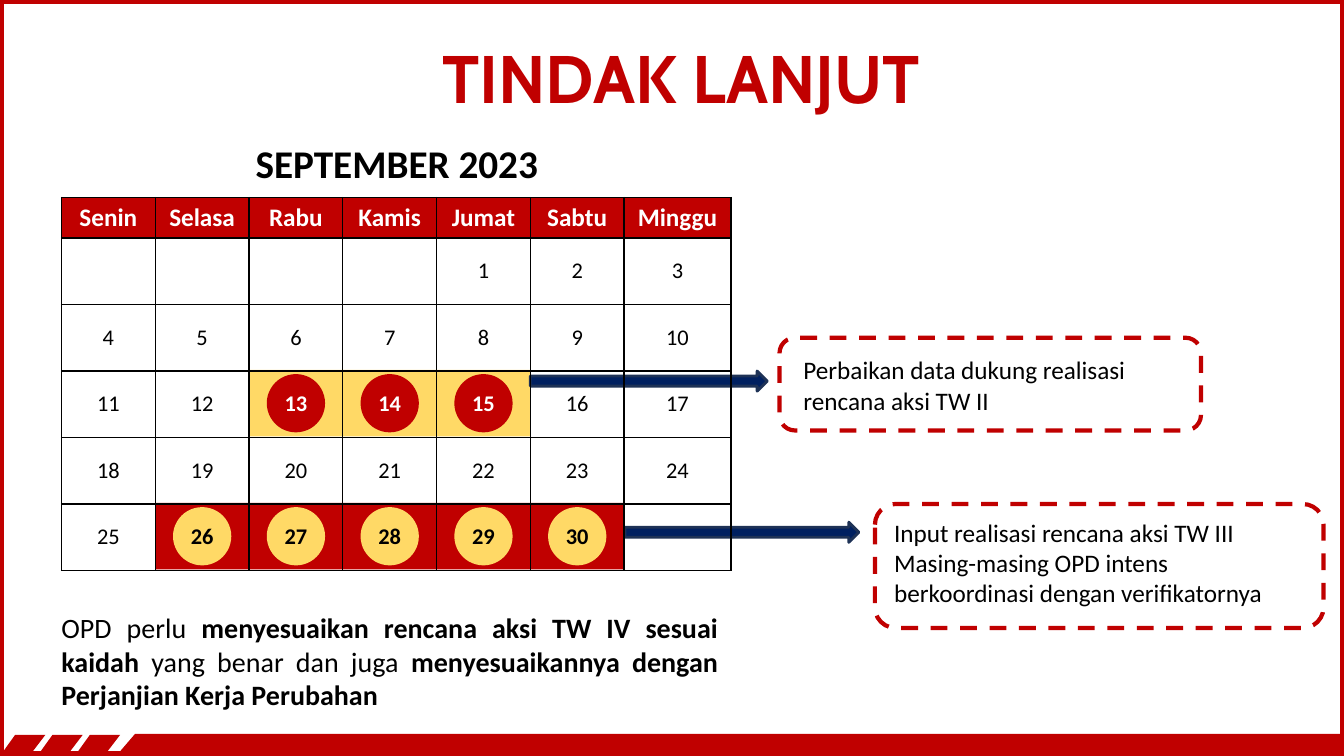
from dataclasses import dataclass

from lxml import etree
from pptx import Presentation
from pptx import util as u
from pptx.dml.color import RGBColor
from pptx.enum import dml, shapes, text
from pptx.oxml.ns import qn


@dataclass(frozen=True)
class Theme:
    red: str = "C00000"
    gold: str = "FFD966"
    navy: str = "002060"
    navy_edge: str = "1E3256"
    black: str = "000000"
    white: str = "FFFFFF"
    display: str = "Cabin"
    body: str = "Calibri"
    title: int = 48
    month: int = 28
    note: int = 20
    label: int = 18
    day: int = 16


@dataclass(frozen=True)
class Box:
    """A rectangle in percent of the slide's width and height."""
    x: float
    y: float
    w: float
    h: float


@dataclass(frozen=True)
class Label:
    box: Box
    paragraphs: list[list[tuple[str, bool]]]  # runs as (words, bold)
    size: int
    align: text.PP_ALIGN = text.PP_ALIGN.LEFT


@dataclass(frozen=True)
class Period:
    """Marked days: a stretch of one week of the calendar."""
    week: int
    first: int
    days: int
    cell: str
    dot: str
    ink: str

    def has(self, week: int, col: int) -> bool:
        return week == self.week and self.first <= col < self.first + self.days


T = Theme()
W, H = 13.33, 7.5
X0, Y0, COL, LAST_COL, HEAD, ROW = 0.61, 1.96, 0.93, 1.06, 0.39, 0.66
WEEKS, OFFSET, MONTH_DAYS, DOT = 5, 3, 30, 0.55
WEEKDAYS = ["Senin", "Selasa", "Rabu", "Kamis", "Jumat", "Sabtu", "Minggu"]
PERIODS = [
    Period(2, 2, 3, T.gold, T.red, T.white),
    Period(4, 1, 5, T.red, T.gold, T.black),
]
CALLOUTS = [Box(58, 44.67, 31.36, 12.27), Box(65.1, 66.67, 33.38, 16.4)]
ARROWS = [Box(39.46, 49.07, 17.63, 2.67), Box(46.51, 69.07, 17.4, 2.67)]
TITLE = Label(Box(5.33, 2.8, 90.7, 14.8), [[("TINDAK LANJUT", True)]],
              T.title, text.PP_ALIGN.CENTER)
LABELS = [
    Label(Box(4.35, 17.73, 50.34, 7.6), [[("SEPTEMBER 2023", True)]],
          T.month, text.PP_ALIGN.CENTER),
    Label(Box(3.83, 80.13, 50.34, 14.8), [[
        ("OPD perlu ", False),
        ("menyesuaikan rencana aksi TW IV sesuai kaidah", True),
        (" yang benar dan juga ", False),
        ("menyesuaikannya dengan Perjanjian Kerja Perubahan", True),
    ]], T.note, text.PP_ALIGN.JUSTIFY),
    Label(Box(59.04, 46.27, 28.96, 9.47),
          [[("Perbaikan data dukung realisasi rencana aksi TW II", False)]], T.label),
    Label(Box(65.79, 67.73, 31.96, 13.47), [
        [("Input realisasi rencana aksi TW III", False)],
        [("Masing-masing OPD intens berkoordinasi dengan verifikatornya", False)],
    ], T.label),
]
STRIPE = [(3.38, 97.2), (1.13, 97.2), (0, 100), (2.18, 100)]
STRIPE_STEP = 2.78
BAND = [(100, 97.07), (10.05, 97.07), (8.7, 99.87), (100, 99.87)]


def rgb(color: str) -> RGBColor:
    return RGBColor.from_string(color)


def px(share: float) -> int:
    return u.Inches(W * share / 100)


def py(share: float) -> int:
    return u.Inches(H * share / 100)


def place(box: Box) -> tuple[int, int, int, int]:
    return px(box.x), py(box.y), px(box.w), py(box.h)


def cell_place(week: int, col: int, days: int) -> tuple[int, int, int, int]:
    """Area of a stretch of calendar days."""
    return (u.Inches(X0 + col * COL), u.Inches(Y0 + HEAD + week * ROW),
            u.Inches(days * COL), u.Inches(ROW))


def paint(sp, fill: str | None, line: str | None = None, width: float = 2) -> None:
    sp.shadow.inherit = False
    if fill:
        sp.fill.solid()
        sp.fill.fore_color.rgb = rgb(fill)
    else:
        sp.fill.background()
    if line:
        sp.line.color.rgb = rgb(line)
        sp.line.width = u.Pt(width)
    else:
        sp.line.fill.background()


def style(font, name: str, size: int, color: str) -> None:
    font.name, font.size = name, u.Pt(size)
    font.color.rgb = rgb(color)


def add_polygon(s, points: list[tuple[float, float]], shift: float = 0) -> None:
    start, *rest = [(px(x + shift), py(y)) for x, y in points]
    builder = s.shapes.build_freeform(*start, scale=1.0)
    builder.add_line_segments(rest, close=True)
    paint(builder.convert_to_shape(), T.red)


def add_label(s, label: Label, name: str, color: str):
    tf = s.shapes.add_textbox(*place(label.box)).text_frame
    tf.word_wrap = True
    for i, runs in enumerate(label.paragraphs):
        p = tf.add_paragraph() if i else tf.paragraphs[0]
        p.alignment = label.align
        style(p.font, name, label.size, color)
        for words, bold in runs:
            r = p.add_run()
            r.text, r.font.bold = words, bold
    return tf


def add_period(s, period: Period) -> None:
    area = cell_place(period.week, period.first, period.days)
    paint(s.shapes.add_shape(shapes.MSO_SHAPE.RECTANGLE, *area), period.cell)
    d = u.Inches(DOT)
    for col in range(period.first, period.first + period.days):
        x, y, w, h = cell_place(period.week, col, 1)
        dot = s.shapes.add_shape(shapes.MSO_SHAPE.OVAL, x + (w - d) // 2,
                                 y + (h - d) // 2, d, d)
        paint(dot, period.dot, period.dot)


def add_borders(cell) -> None:
    tc_pr = cell._tc.get_or_add_tcPr()
    for i, side in enumerate(("lnL", "lnR", "lnT", "lnB")):
        ln = etree.Element(qn(f"a:{side}"), w=str(u.Pt(1)))
        fill = etree.SubElement(ln, qn("a:solidFill"))
        etree.SubElement(fill, qn("a:srgbClr"), val=T.black)
        tc_pr.insert(i, ln)


def fill_cell(cell, words: str, size: int, color: str, bold: bool) -> None:
    p = cell.text_frame.paragraphs[0]
    p.text, p.alignment = words, text.PP_ALIGN.CENTER
    style(p.font, T.body, size, color)
    p.font.bold = bold


def add_calendar(s) -> None:
    cols = len(WEEKDAYS)
    table = s.shapes.add_table(
        WEEKS + 1, cols, u.Inches(X0), u.Inches(Y0),
        u.Inches(COL * (cols - 1) + LAST_COL), u.Inches(HEAD + WEEKS * ROW)).table
    table.first_row = table.horz_banding = False
    for c, weekday in enumerate(WEEKDAYS):
        table.columns[c].width = u.Inches(LAST_COL if c == cols - 1 else COL)
        head = table.cell(0, c)
        fill_cell(head, weekday, T.label, T.white, True)
        head.fill.solid()
        head.fill.fore_color.rgb = rgb(T.red)
        add_borders(head)
        for week in range(WEEKS):
            day = week * cols + c - OFFSET
            period = next((m for m in PERIODS if m.has(week, c)), None)
            cell = table.cell(week + 1, c)
            fill_cell(cell, str(day) if 1 <= day <= MONTH_DAYS else "", T.day,
                      period.ink if period else T.black, period is not None)
            cell.vertical_anchor = text.MSO_ANCHOR.MIDDLE
            cell.fill.background()
            add_borders(cell)
    for i, row in enumerate(table.rows):
        row.height = u.Inches(ROW if i else HEAD)


def main() -> None:
    prs = Presentation()
    prs.slide_width, prs.slide_height = u.Inches(W), u.Inches(H)
    s = prs.slides.add_slide(prs.slide_layouts[6])
    add_polygon(s, BAND)
    for i in range(3):
        add_polygon(s, STRIPE, i * STRIPE_STEP)
    frame = s.shapes.add_shape(shapes.MSO_SHAPE.RECTANGLE, *place(Box(0, 0, 100, 99.87)))
    paint(frame, None, T.red, 6)
    for box in CALLOUTS:
        sp = s.shapes.add_shape(shapes.MSO_SHAPE.ROUNDED_RECTANGLE, *place(box))
        paint(sp, None, T.red, 3)
        sp.line.dash_style = dml.MSO_LINE.DASH
    for period in PERIODS:
        add_period(s, period)
    tf = add_label(s, TITLE, T.display, T.red)
    tf.vertical_anchor = text.MSO_ANCHOR.MIDDLE
    for box in ARROWS:
        sp = s.shapes.add_shape(shapes.MSO_SHAPE.RIGHT_ARROW, *place(box))
        paint(sp, T.navy, T.navy_edge)
    for label in LABELS:
        add_label(s, label, T.body, T.black).auto_size = text.MSO_AUTO_SIZE.SHAPE_TO_FIT_TEXT
    add_calendar(s)
    prs.save("out.pptx")


if __name__ == "__main__":
    main()
